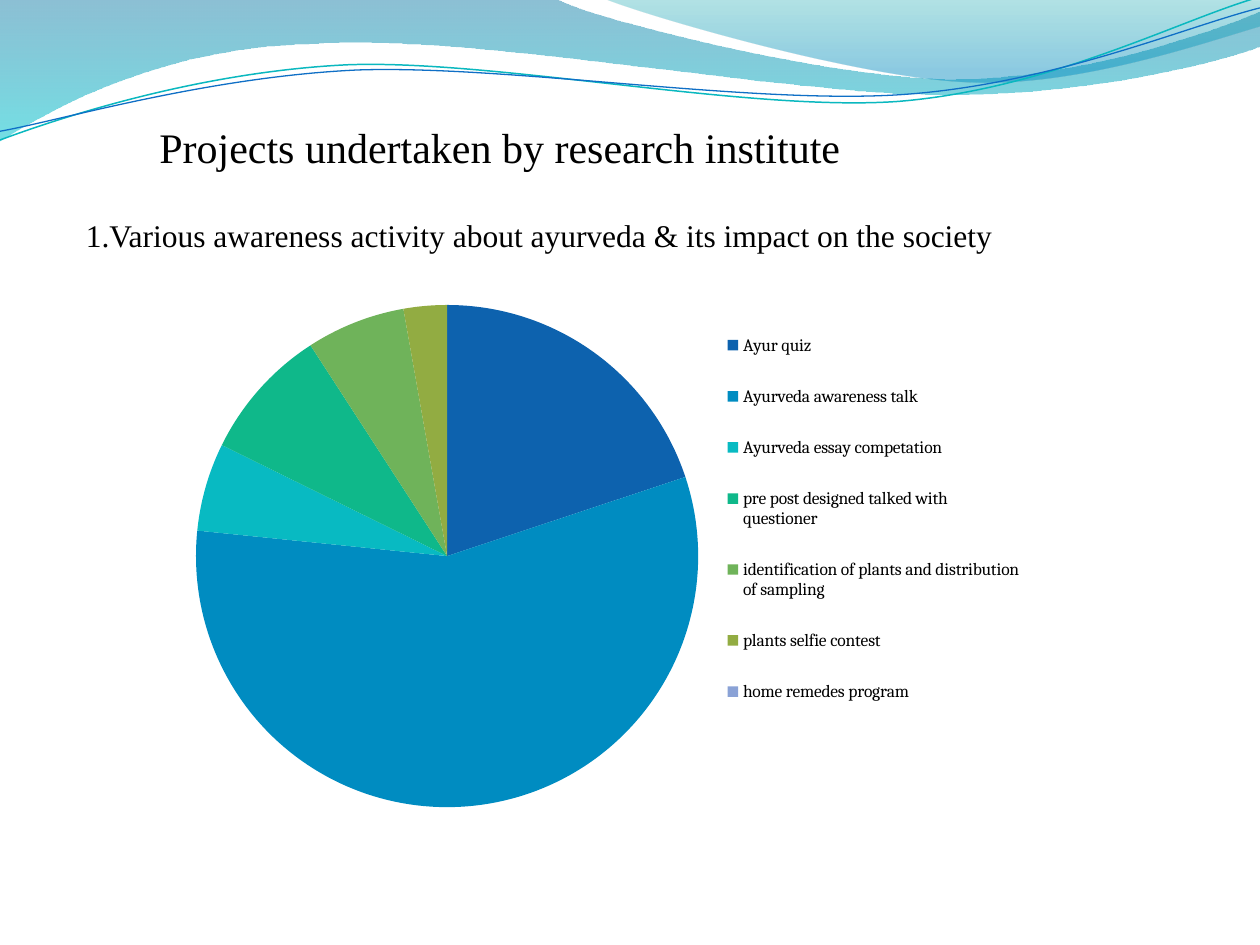
from lxml.etree import SubElement
from pptx import Presentation
from pptx.chart.data import CategoryChartData
from pptx.dml.color import RGBColor
from pptx.enum.chart import XL_CHART_TYPE, XL_LEGEND_POSITION
from pptx.oxml import parse_xml
from pptx.oxml.ns import nsdecls, qn
from pptx.util import Pt

COLORS = {
    "text": "000000", "band_top": "0074A1", "band_bottom": "00C6CF",
    "fold_top": "00A1A9", "fold_bottom": "008BBF",
    "wave_teal": "0AB8BF", "wave_blue": "0F6FC6",
}
SLICE_COLORS = ["0D62AE", "008CC1", "08BAC2", "0FB88A", "6FB35A", "92AC42", "8AA2D6"]
ACTIVITIES = [
    ("Ayur quiz", 20),
    ("Ayurveda awareness talk", 57),
    ("Ayurveda essay competation", 5.7),
    ("pre post designed talked with questioner", 8.6),
    ("identification of plants and distribution of sampling", 6.4),
    ("plants selfie contest", 2.8),
    ("home remedes program", None),
]
CHART_WIDTH, CHART_HEIGHT = 486, 348
BAND = [(0, 0), (317, -1), (343, 12, 478, 45, 546, 45), (614, 45, 690, 19, 720, 6.5),
        (721, 26), (708, 32, 626, 55, 537, 54), (448, 54, 275, 20, 185, 24.5),
        (93, 26, 33, 60, -1, 81)]
FOLD = [(345, -1), (366, 8, 491, 45, 554, 47), (616, 50, 692, 23, 720, 15), (720, 0)]
TEAL_WAVE = [(0, 80), (35, 67, 114, 41, 199, 37), (284, 34, 427, 64, 513, 58),
             (600, 51, 675, 11, 719, -1.5)]
BLUE_WAVE = [(0, 75), (34, 69, 118, 44, 204, 40), (290, 37, 430, 60, 516, 54),
             (602, 48, 678, 15, 720, 4.5)]


def rgb(value):
    return RGBColor.from_string(value)


def add_outline(slide, segments, close):
    points = [(Pt(seg[i]), Pt(seg[i + 1])) for seg in segments for i in range(0, len(seg), 2)]
    builder = slide.shapes.build_freeform(*points[0])
    builder.add_line_segments(points[1:], close=close)
    s = builder.convert_to_shape()
    s.shadow.inherit = False
    lines = iter(list(s._element.spPr.iter(qn("a:lnTo"))))
    for segment in segments[1:]:
        line = next(lines)
        if len(segment) == 6:
            line.tag = qn("a:cubicBezTo")
            for _ in range(2):
                extra = next(lines)
                line.append(extra[0])
                extra.getparent().remove(extra)
    return s


def add_gradient_area(slide, segments, stops):
    s = add_outline(slide, segments, True)
    s.line.fill.background()
    s.fill.gradient()
    s.fill.gradient_angle = 270
    for stop, (position, color, _) in zip(s.fill.gradient_stops, stops):
        stop.position = position
        stop.color.rgb = rgb(COLORS[color])
    clrs = s._element.spPr.iter(qn("a:srgbClr"))
    for clr, (_, _, opacity) in zip(clrs, stops):
        SubElement(clr, qn("a:alpha")).set("val", str(opacity * 1000))


def add_wave(slide, segments, color, width):
    s = add_outline(slide, segments, False)
    s.fill.background()
    s.line.color.rgb = rgb(COLORS[color])
    s.line.width = Pt(width)


def add_text(slide, text, *, left, top, width, height, size, font="Times New Roman"):
    tf = slide.shapes.add_textbox(Pt(left), Pt(top), Pt(width), Pt(height)).text_frame
    tf.word_wrap = True
    r = tf.paragraphs[0].add_run()
    r.text = text
    r.font.size = Pt(size)
    r.font.name = font
    r.font.color.rgb = rgb(COLORS["text"])


def manual_layout(x, y, w, h, inner=False):
    target = '<c:layoutTarget val="inner"/>' if inner else ""
    modes = '<c:xMode val="edge"/><c:yMode val="edge"/>'
    shares = (x / CHART_WIDTH, y / CHART_HEIGHT, w / CHART_WIDTH, h / CHART_HEIGHT)
    sizes = "".join(f'<c:{k} val="{v:.4f}"/>' for k, v in zip("xywh", shares))
    return parse_xml(f'<c:layout {nsdecls("c")}><c:manualLayout>{target}{modes}{sizes}'
                     '</c:manualLayout></c:layout>')


def set_layout(element, layout, after=None):
    for old in element.findall(qn("c:layout")):
        element.remove(old)
    if after is None:
        element.insert(0, layout)
    else:
        element.find(qn(after)).addnext(layout)


def add_pie(slide):
    data = CategoryChartData()
    data.categories = [name for name, _ in ACTIVITIES]
    data.add_series("Series 1", [value for _, value in ACTIVITIES])
    chart = slide.shapes.add_chart(XL_CHART_TYPE.PIE, Pt(102), Pt(144), Pt(CHART_WIDTH),
                                   Pt(CHART_HEIGHT), data).chart
    chart.has_title = False
    chart.font.size = Pt(10)
    chart.font.name = "Cambria"
    chart.font.color.rgb = rgb(COLORS["text"])
    chart.has_legend = True
    chart.legend.position = XL_LEGEND_POSITION.RIGHT
    chart.legend.include_in_layout = False
    plot = chart.plots[0]
    plot.vary_by_categories = True
    for i, color in enumerate(SLICE_COLORS):
        fill = plot.series[0].points[i].format.fill
        fill.solid()
        fill.fore_color.rgb = rgb(color)
    plot_area = chart._chartSpace.chart.plotArea
    set_layout(plot_area, manual_layout(10, 30.3, 287, 287, inner=True))
    set_layout(chart.legend._element, manual_layout(313.3, 29.6, 170, 245.4), "c:legendPos")


def main():
    prs = Presentation()
    prs.slide_width, prs.slide_height = Pt(720), Pt(540)
    slide = prs.slides.add_slide(prs.slide_layouts[6])
    add_gradient_area(slide, BAND, [(0, "band_top", 45), (1, "band_bottom", 55)])
    add_gradient_area(slide, FOLD, [(0, "fold_top", 30), (0.8, "fold_bottom", 45)])
    add_wave(slide, TEAL_WAVE, "wave_teal", 0.85)
    add_wave(slide, BLUE_WAVE, "wave_blue", 0.75)
    add_text(slide, "Projects undertaken by research institute",
             left=84, top=66, width=510, height=66, size=24)
    add_text(slide, "1.Various awareness activity about ayurveda & its impact on the society",
             left=42, top=120, width=570, height=29, size=18)
    add_pie(slide)
    prs.save("out.pptx")


if __name__ == "__main__":
    main()
